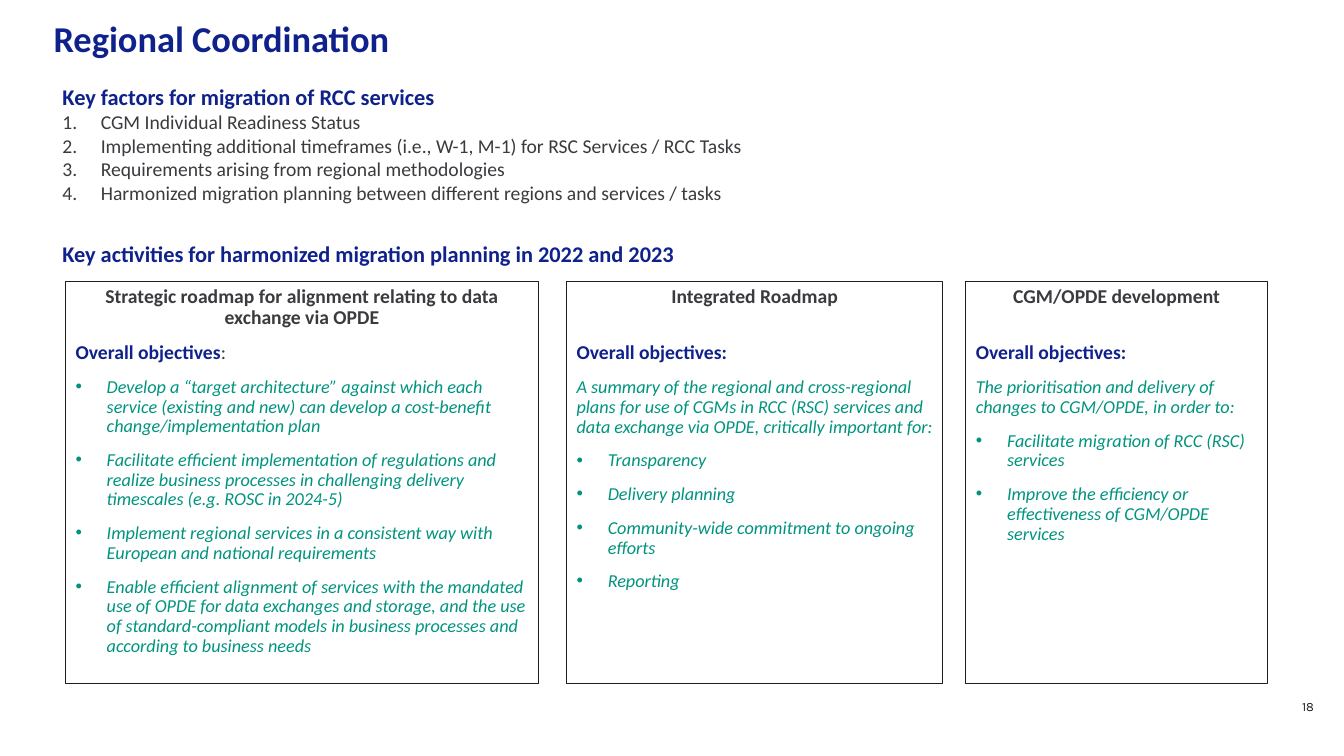
import pptx
import pptx.util
import pptx.dml.color
import pptx.enum.shapes
import pptx.enum.text
import pptx.oxml
import pptx.oxml.ns

NAVY = pptx.dml.color.RGBColor(0x0F, 0x21, 0x8B)
GREEN = pptx.dml.color.RGBColor(0x00, 0x94, 0x7F)
GREY = pptx.dml.color.RGBColor(0x3A, 0x3A, 0x3F)
BLACK = pptx.dml.color.RGBColor(0x1D, 0x1D, 0x20)

TITLE = "Regional Coordination"
PAGE_NUMBER = "18"
FACTORS = [
    ("heading", "Key factors for migration of RCC services"),
    ("number", "CGM Individual Readiness Status"),
    ("number", "Implementing additional timeframes (i.e., W-1, M-1) for RSC Services / RCC Tasks"),
    ("number", "Requirements arising from regional methodologies"),
    ("number", "Harmonized migration planning between different regions and services / tasks"),
]
ACTIVITIES = [("heading", "Key activities for harmonized migration planning in 2022 and 2023")]
COLUMNS = [
    (4.88, 35.18, [
        ("column", "Strategic roadmap for alignment relating to data exchange via OPDE"),
        ("objective", "Overall objectives", ":"),
        ("bullet", "Develop a “target architecture” against which each service (existing and new) can develop a cost-benefit change/implementation plan"),
        ("bullet", "Facilitate efficient implementation of regulations and realize business processes in challenging delivery timescales (e.g. ROSC in 2024-5)"),
        ("bullet", "Implement regional services in a consistent way with European and national requirements"),
        ("bullet", "Enable efficient alignment of services with the mandated use of OPDE for data exchanges and storage, and the use of standard-compliant models in business processes and according to business needs"),
    ]),
    (42.16, 27.98, [
        ("column", "Integrated Roadmap"),
        ("low objective", "Overall objectives:"),
        ("summary", "A summary of the regional and cross-regional plans for use of CGMs in RCC (RSC) services and data exchange via OPDE, critically important for:"),
        ("bullet", "Transparency"),
        ("bullet", "Delivery planning"),
        ("bullet", "Community-wide commitment to ongoing efforts"),
        ("bullet", "Reporting"),
    ]),
    (71.87, 22.43, [
        ("column", "CGM/OPDE development"),
        ("low objective", "Overall objectives:"),
        ("summary", "The prioritisation and delivery of changes to CGM/OPDE, in order to:"),
        ("bullet", "Facilitate migration of RCC (RSC) services"),
        ("bullet", "Improve the efficiency or effectiveness of CGM/OPDE services"),
    ]),
]

POINT = pptx.util.Pt
ALIGN = pptx.enum.text.PP_ALIGN
ANCHOR = pptx.enum.text.MSO_ANCHOR
BULLET = ('a:buChar', 'char="•"')
NUMBER = ('a:buAutoNum', 'type="arabicPeriod"')
PLAIN = ('a:buNone', '')


def make_style(size, color, bold=False, italic=False, font="Calibri", align=ALIGN.LEFT,
               line=0.9, before=10, indent=0, marker=PLAIN):
    return {
        "font": {"name": font, "size": POINT(size), "bold": bold, "italic": italic},
        "color": color,
        "paragraph": {"alignment": align, "line_spacing": line, "space_before": POINT(before),
                      "space_after": POINT(0)},
        "indent": pptx.util.Inches(indent),
        "marker": marker,
    }


STYLES = {
    "title": make_style(26, NAVY, bold=True, line=POINT(32)),
    "page": make_style(9, BLACK, font="Karla", align=ALIGN.RIGHT, line=POINT(9)),
    "heading": make_style(16, NAVY, bold=True),
    "number": make_style(14, GREY, line=1.0, before=0, indent=0.38, marker=NUMBER),
    "column": make_style(14, GREY, bold=True, align=ALIGN.CENTER),
    "objective": make_style(14, NAVY, bold=True),
    "low objective": make_style(14, NAVY, bold=True, before=25.4),
    "summary": make_style(13, GREEN, italic=True),
    "bullet": make_style(13, GREEN, italic=True, indent=0.31, marker=BULLET),
}

presentation = pptx.Presentation()
presentation.slide_width = pptx.util.Inches(13.33)
presentation.slide_height = pptx.util.Inches(7.5)
slide = presentation.slides.add_slide(presentation.slide_layouts[1])


def area(left, top, width, height):
    across = presentation.slide_width / 100
    down = presentation.slide_height / 100
    return [round(left * across), round(top * down), round(width * across), round(height * down)]


def set_values(target, values):
    for name, value in values.items():
        setattr(target, name, value)


def place(shape, box):
    set_values(shape, dict(zip(("left", "top", "width", "height"), box)))


def add_run(paragraph, text, style):
    run = paragraph.add_run()
    run.text = text
    set_values(run.font, style["font"])
    run.font.color.rgb = style["color"]
    return run


def write(shape, lines, anchor=ANCHOR.TOP):
    frame = shape.text_frame
    set_values(frame, {"word_wrap": True, "vertical_anchor": anchor,
                       "auto_size": pptx.enum.text.MSO_AUTO_SIZE.NONE})
    for position, (kind, text, *plain_ending) in enumerate(lines):
        style = STYLES[kind]
        paragraph = frame.add_paragraph() if position else frame.paragraphs[0]
        properties = paragraph._p.get_or_add_pPr()
        properties.set("marL", str(style["indent"]))
        properties.set("indent", str(-style["indent"]))
        tag, attributes = style["marker"]
        namespace = pptx.oxml.ns.nsdecls("a")
        if style["marker"] == BULLET:
            properties.append(pptx.oxml.parse_xml(f'<a:buFont {namespace} typeface="Arial"/>'))
        properties.append(pptx.oxml.parse_xml(f"<{tag} {namespace} {attributes}/>"))
        set_values(paragraph, style["paragraph"])
        if position == 0:
            paragraph.space_before = POINT(0)
        add_run(paragraph, text, style)
        for ending in plain_ending:
            run = add_run(paragraph, ending, style)
            run.font.bold = False
            run.font.color.rgb = GREY


title = slide.shapes.title
place(title, area(3.23, 2.4, 95.35, 5.2))
write(title, [("title", TITLE)], ANCHOR.MIDDLE)

factors = slide.placeholders[1]
place(factors, area(3.9, 10.67, 89.2, 17.2))
write(factors, FACTORS)

activities = slide.shapes.add_textbox(*area(3.9, 31.47, 89.2, 4.53))
write(activities, ACTIVITIES)

for left, width, lines in COLUMNS:
    column = slide.shapes.add_shape(pptx.enum.shapes.MSO_SHAPE.RECTANGLE,
                                    *area(left, 37.2, width, 53.2))
    column.shadow.inherit = False
    column.fill.background()
    column.line.color.rgb = BLACK
    column.line.width = POINT(0.75)
    write(column, lines)

page = slide.shapes.add_textbox(*area(50.64, 90.93, 47.86, 5.33))
write(page, [("page", PAGE_NUMBER)], ANCHOR.MIDDLE)

presentation.save("out.pptx")
